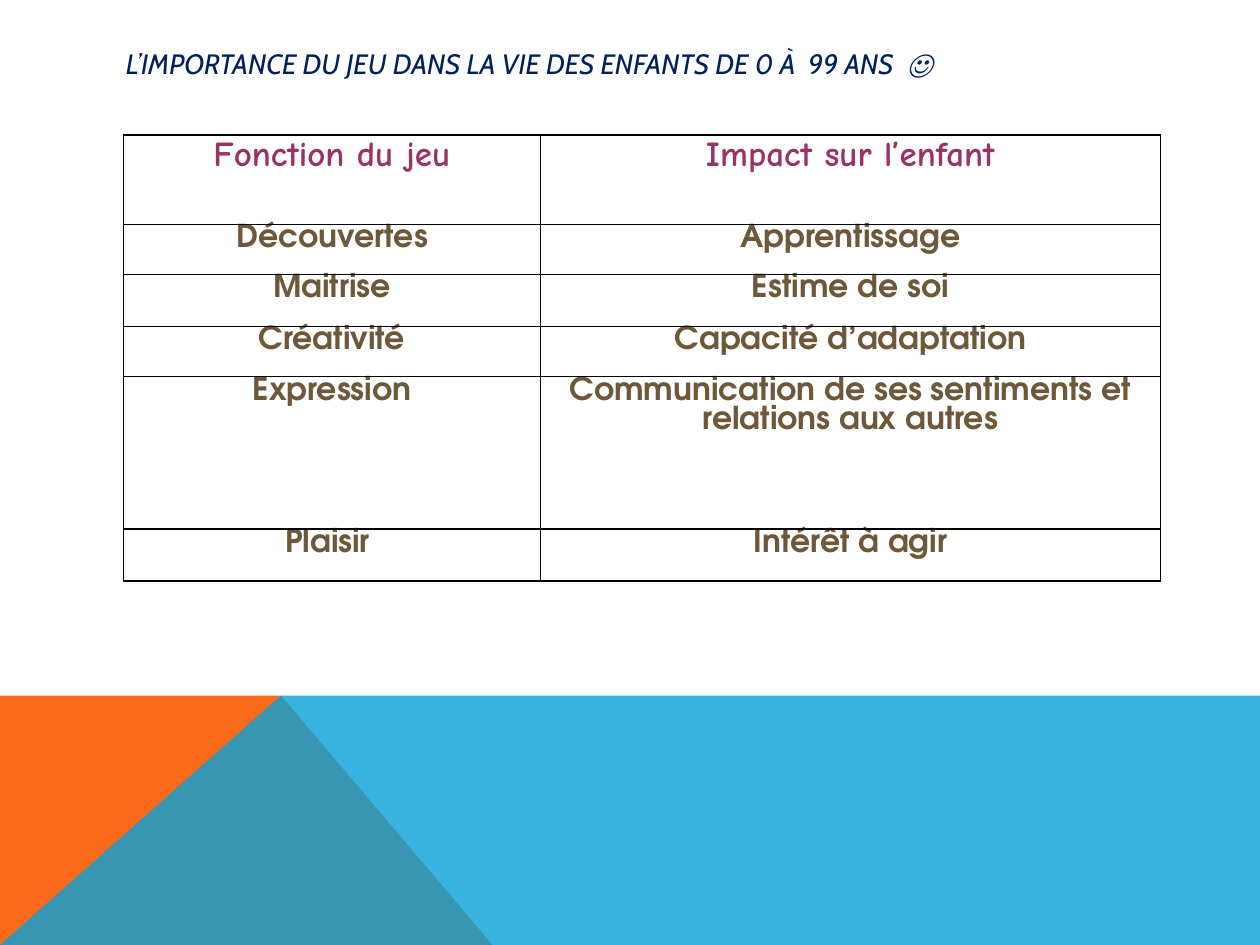
from pptx import Presentation
from pptx.dml.color import RGBColor
from pptx.enum.text import MSO_ANCHOR, PP_ALIGN
from pptx.oxml import parse_xml
from pptx.oxml.ns import nsdecls
from pptx.util import Inches, Pt

NAVY = RGBColor(0x00, 0x20, 0x60)
PLUM = RGBColor(0x99, 0x33, 0x66)
BROWN = RGBColor(0x6D, 0x59, 0x3A)
ORANGE = RGBColor(0xF9, 0x6A, 0x1B)
BLUE = RGBColor(0x08, 0xA1, 0xD9)
BLACK = RGBColor(0x00, 0x00, 0x00)

# Content
TITLE = "L’IMPORTANCE DU JEU DANS LA VIE DES ENFANTS DE 0 À  99 ANS  ☺"
ROWS = [
    ("Fonction du jeu", "Impact sur l’enfant"),
    ("Découvertes", "Apprentissage"),
    ("Maitrise", "Estime de soi"),
    ("Créativité", "Capacité d’adaptation"),
    ("Expression", "Communication de ses sentiments et relations aux autres"),
    ("Plaisir ", "Intérêt à agir"),
]
COLUMN_WIDTHS = [3.31, 4.92]
ROW_HEIGHTS = [0.71, 0.4, 0.41, 0.4, 1.21, 0.41]

# Bottom bands: outline, colour, opacity in percent
BANDS = [
    ([(0, 7.5), (0, 5.52), (2.23, 5.52), (3.91, 7.5)], ORANGE, 100),
    ([(0, 7.5), (2.23, 5.52), (10, 5.52), (10, 7.5)], BLUE, 80),
]

TITLE_FONT = {"name": "Cabin", "size": Pt(16), "italic": True}
HEADER_FONT = {"name": "Comic Neue", "size": Pt(20), "bold": True}
BODY_FONT = {"name": "TeX Gyre Adventor", "size": Pt(18), "bold": True}
CELL_FORMAT = {"margin_left": Inches(0.07), "margin_right": Inches(0.07),
               "margin_top": 0, "margin_bottom": 0,
               "vertical_anchor": MSO_ANCHOR.TOP}


def set_attributes(target, values):
    for name, value in values.items():
        setattr(target, name, value)


def write(paragraph, text, font_format, color):
    run = paragraph.add_run()
    run.text = text
    set_attributes(run.font, font_format)
    run.font.color.rgb = color


def add_band(slide, points, color, opacity):
    corners = [(Inches(x), Inches(y)) for x, y in points]
    builder = slide.shapes.build_freeform(*corners[0])
    builder.add_line_segments(corners[1:], close=True)
    shape = builder.convert_to_shape()
    shape.shadow.inherit = False
    shape.fill.solid()
    shape.fill.fore_color.rgb = color
    shape.line.fill.background()
    if opacity < 100:
        color_element = shape.fill._xPr.find(".//{*}srgbClr")
        color_element.append(parse_xml(
            f'<a:alpha {nsdecls("a")} val="{opacity * 1000}"/>'))


def add_borders(cell):
    properties = cell._tc.get_or_add_tcPr()
    for position, side in enumerate(("lnL", "lnR", "lnT", "lnB")):
        properties.insert(position, parse_xml(
            f'<a:{side} {nsdecls("a")} w="{Pt(1)}"><a:solidFill>'
            f'<a:srgbClr val="{BLACK}"/></a:solidFill></a:{side}>'))


def add_title(slide):
    box = slide.shapes.add_textbox(
        Inches(0.9), Inches(0.4), Inches(8.22), Inches(0.2))
    frame = box.text_frame
    frame.word_wrap = True
    frame.vertical_anchor = MSO_ANCHOR.MIDDLE
    write(frame.paragraphs[0], TITLE, TITLE_FONT, NAVY)


def add_game_table(slide):
    table = slide.shapes.add_table(
        len(ROWS), len(COLUMN_WIDTHS), Inches(0.98), Inches(1.07),
        Inches(sum(COLUMN_WIDTHS)), Inches(sum(ROW_HEIGHTS))).table
    set_attributes(table, {"first_row": False, "horz_banding": False})
    for column, width in zip(table.columns, COLUMN_WIDTHS):
        column.width = Inches(width)
    for row, height in zip(table.rows, ROW_HEIGHTS):
        row.height = Inches(height)
    for row_index, texts in enumerate(ROWS):
        style = (HEADER_FONT, PLUM) if row_index == 0 else (BODY_FONT, BROWN)
        for column_index, text in enumerate(texts):
            cell = table.cell(row_index, column_index)
            set_attributes(cell, CELL_FORMAT)
            cell.fill.background()
            add_borders(cell)
            paragraph = cell.text_frame.paragraphs[0]
            paragraph.alignment = PP_ALIGN.CENTER
            write(paragraph, text, *style)


def main():
    presentation = Presentation()
    presentation.slide_width = Inches(10)
    presentation.slide_height = Inches(7.5)
    slide = presentation.slides.add_slide(presentation.slide_layouts[6])
    for points, color, opacity in BANDS:
        add_band(slide, points, color, opacity)
    add_title(slide)
    add_game_table(slide)
    presentation.save("out.pptx")


if __name__ == "__main__":
    main()
